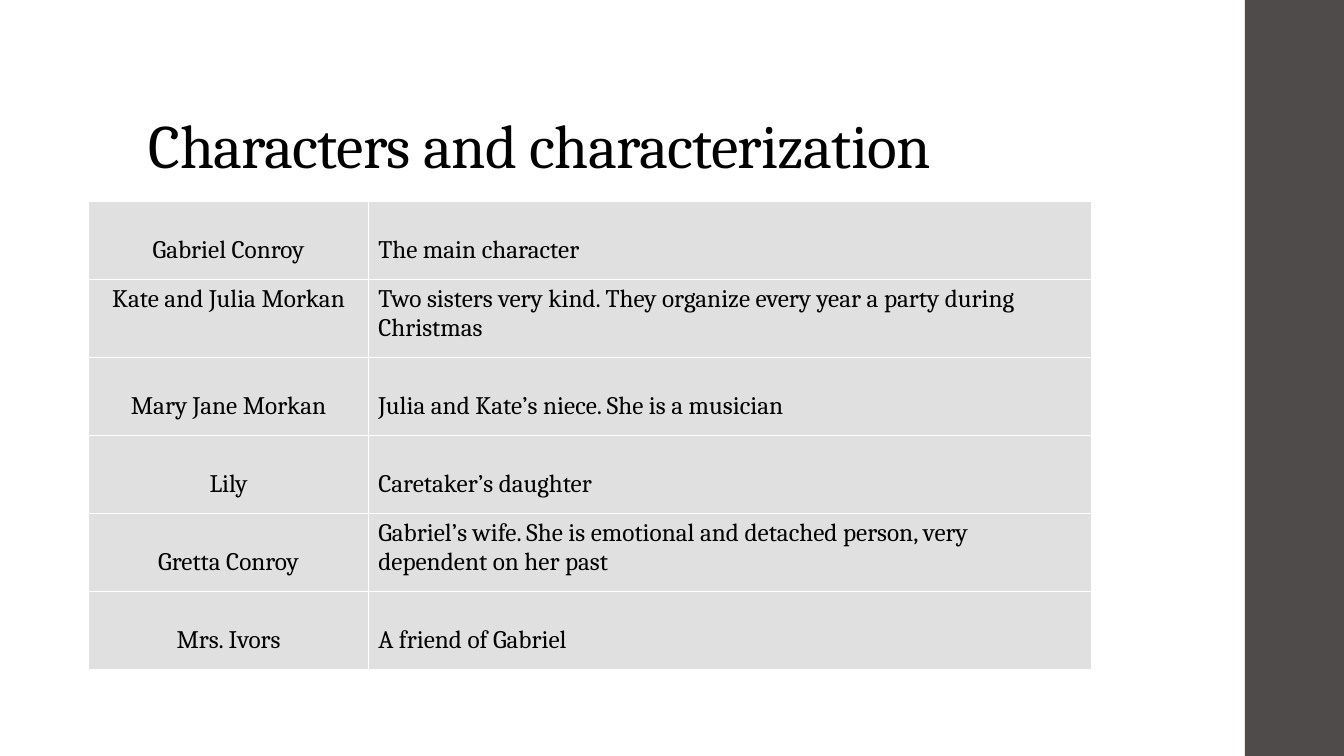
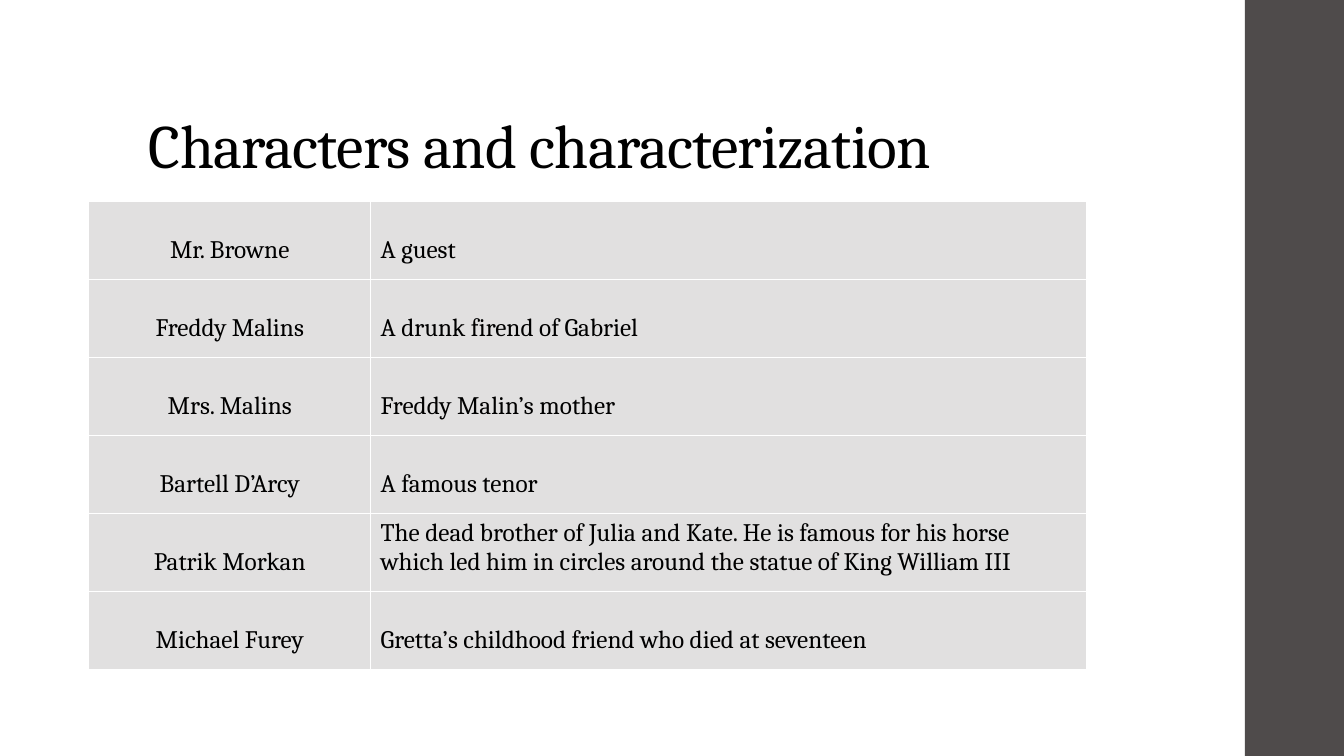
"""Build two slides that list the characters of a story in tables."""
from dataclasses import dataclass

from lxml import etree
from pptx import Presentation
from pptx.dml.color import RGBColor
from pptx.enum.shapes import MSO_SHAPE
from pptx.enum.text import MSO_ANCHOR, PP_ALIGN
from pptx.oxml.ns import qn
from pptx.util import Cm, Pt

RECTANGLE = MSO_SHAPE.RECTANGLE
BOTTOM = MSO_ANCHOR.BOTTOM
LEFT, CENTER = PP_ALIGN.LEFT, PP_ALIGN.CENTER


@dataclass(frozen=True)
class Theme:
    """Colours, font and type sizes of the deck."""
    font: str = "Cambria"
    ink: str = "000000"
    band: str = "4F4B4B"
    cell: str = "E1E0E0"
    border: str = "FFFFFF"
    title_size: int = 44
    body_size: int = 18
    border_width: int = 1


@dataclass(frozen=True)
class Character:
    """One table row, with the line spacing of its two cells."""
    name: str
    role: str
    name_spacing: float = 2
    role_spacing: float = 2


THEME = Theme()
SLIDE_WIDTH, SLIDE_HEIGHT = Cm(33.87), Cm(19.05)
BAND_LEFT = Cm(31.37)
ROW_HEIGHT = Cm(1.965)
TITLE = "Characters and characterization"

FAMILY = [
    Character("Gabriel Conroy", "The main character"),
    Character("Kate and Julia Morkan",
              "Two sisters very kind. They organize every year a party during Christmas",
              name_spacing=1, role_spacing=1),
    Character("Mary Jane Morkan", "Julia and Kate’s niece. She is a musician"),
    Character("Lily", "Caretaker’s daughter"),
    Character("Gretta Conroy",
              "Gabriel’s wife. She is emotional and detached person, very dependent on her past",
              role_spacing=1),
    Character("Mrs. Ivors", "A friend of Gabriel"),
]
GUESTS = [
    Character("Mr. Browne", "A guest"),
    Character("Freddy Malins", "A drunk firend of Gabriel"),
    Character("Mrs. Malins", "Freddy Malin’s mother"),
    Character("Bartell D’Arcy", "A famous tenor"),
    Character("Patrik Morkan",
              "The dead brother of Julia and Kate. He is famous for his horse "
              "which led him in circles around the statue of King William III",
              role_spacing=1),
    Character("Michael Furey", "Gretta’s childhood friend who died at seventeen"),
]


def write_text(frame, text, *, size=THEME.body_size, align=LEFT, line_spacing=1.0, tracking=0):
    """Write one formatted paragraph; tracking is in points."""
    para = frame.paragraphs[0]
    para.alignment = align
    para.line_spacing = line_spacing
    span = para.add_run()
    span.text = text
    span.font.name = THEME.font
    span.font.size = Pt(size)
    span.font.color.rgb = RGBColor.from_string(THEME.ink)
    if tracking:
        span.font._element.set("spc", str(round(tracking * 100)))


def add_band(page):
    """Add the dark band at the right edge."""
    band = page.shapes.add_shape(RECTANGLE, BAND_LEFT, 0, SLIDE_WIDTH - BAND_LEFT, SLIDE_HEIGHT)
    band.shadow.inherit = False
    band.fill.solid()
    band.fill.fore_color.rgb = RGBColor.from_string(THEME.band)
    band.line.fill.background()


def add_title(page, text):
    """Add the slide title."""
    box = page.shapes.add_textbox(Cm(3.5), Cm(1.02), Cm(26.92), Cm(3.68))
    box.text_frame.word_wrap = True
    box.text_frame.vertical_anchor = BOTTOM
    write_text(box.text_frame, text, size=THEME.title_size, line_spacing=0.9, tracking=-0.5)


def style_cell(cell):
    """Give a cell its borders and fill."""
    properties = cell._tc.get_or_add_tcPr()
    for side in ("a:lnL", "a:lnR", "a:lnT", "a:lnB"):
        line = etree.SubElement(properties, qn(side), w=str(Pt(THEME.border_width)))
        fill = etree.SubElement(line, qn("a:solidFill"))
        etree.SubElement(fill, qn("a:srgbClr"), val=THEME.border)
    cell.fill.solid()
    cell.fill.fore_color.rgb = RGBColor.from_string(THEME.cell)


def add_character_table(page, characters, column_widths):
    """Add a table of names and roles."""
    table = page.shapes.add_table(len(characters), len(column_widths), Cm(2.24), Cm(5.08),
                                  sum(column_widths), ROW_HEIGHT * len(characters)).table
    table.first_row = False
    table.horz_banding = False
    for column, width in zip(table.columns, column_widths):
        column.width = width
    for row, character in zip(table.rows, characters):
        row.height = ROW_HEIGHT
        name_cell, role_cell = row.cells
        write_text(name_cell.text_frame, character.name, align=CENTER,
                   line_spacing=character.name_spacing)
        write_text(role_cell.text_frame, character.role, line_spacing=character.role_spacing)
        for cell in (name_cell, role_cell):
            style_cell(cell)


def add_character_page(deck, characters, column_widths):
    """Add a slide with band, title and character table."""
    page = deck.slides.add_slide(deck.slide_layouts[6])
    add_band(page)
    add_title(page, TITLE)
    add_character_table(page, characters, column_widths)


def main():
    """Build and save the deck."""
    deck = Presentation()
    deck.slide_width, deck.slide_height = SLIDE_WIDTH, SLIDE_HEIGHT
    add_character_page(deck, FAMILY, (Cm(7.04), Cm(18.24)))
    add_character_page(deck, GUESTS, (Cm(7.1), Cm(18.04)))
    deck.save("out.pptx")


if __name__ == "__main__":
    main()
